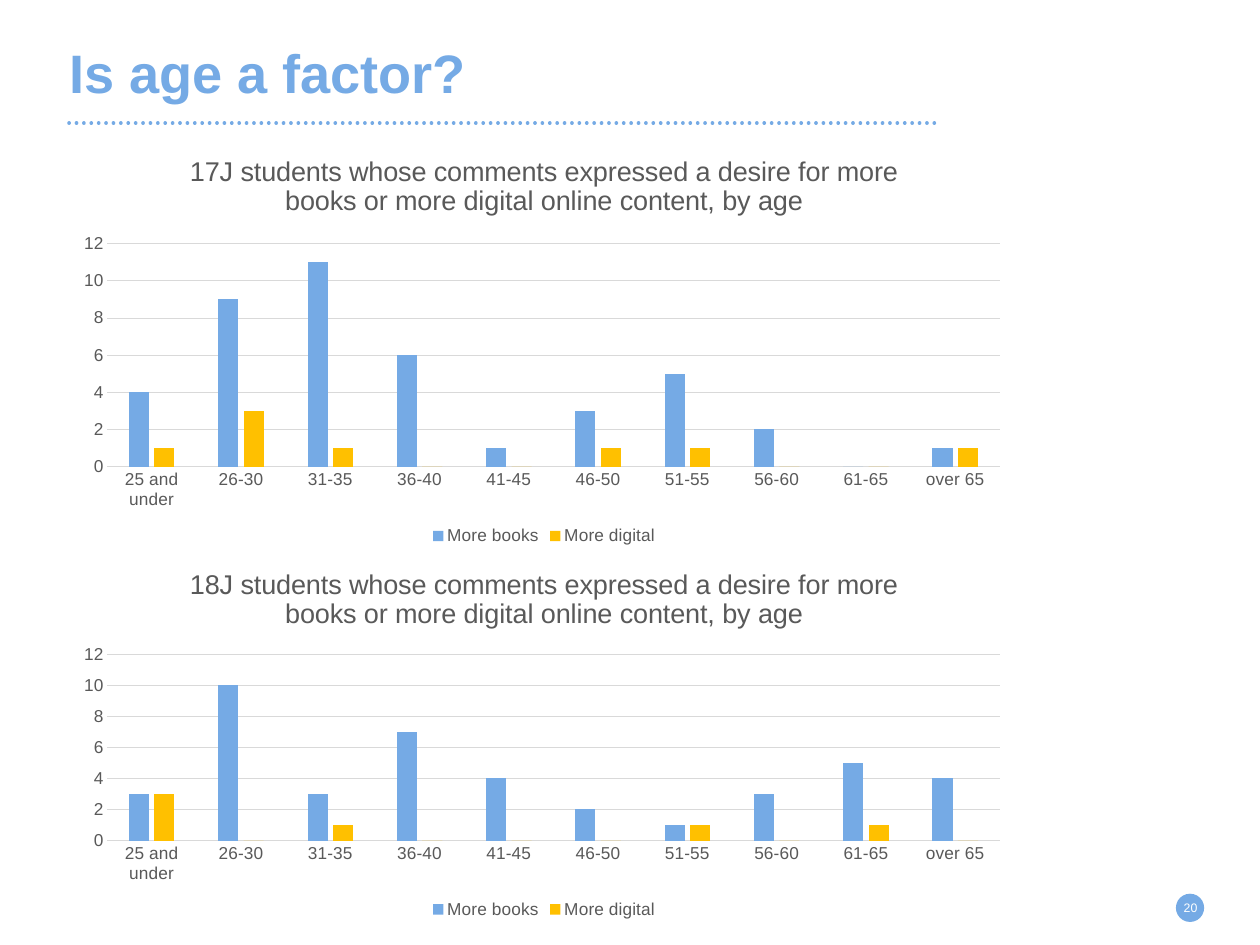
"""Build the slide on age and the wish for more books or digital content."""
from pptx import Presentation
from pptx.chart.data import CategoryChartData
from pptx.dml.color import RGBColor
from pptx.enum.chart import XL_CHART_TYPE, XL_LEGEND_POSITION, XL_TICK_MARK
from pptx.enum.dml import MSO_LINE
from pptx.enum.shapes import MSO_CONNECTOR, MSO_SHAPE
from pptx.enum.text import MSO_ANCHOR, PP_ALIGN
from pptx.oxml import parse_xml
from pptx.oxml.ns import nsdecls, qn
from pptx.util import Cm, Pt
from lxml import etree

COLUMN = XL_CHART_TYPE.COLUMN_CLUSTERED
BOTTOM = XL_LEGEND_POSITION.BOTTOM
NO_TICK = XL_TICK_MARK.NONE
DOTS = MSO_LINE.ROUND_DOT
STRAIGHT = MSO_CONNECTOR.STRAIGHT
OVAL = MSO_SHAPE.OVAL
TOP, MIDDLE = MSO_ANCHOR.TOP, MSO_ANCHOR.MIDDLE
LEFT, CENTER = PP_ALIGN.LEFT, PP_ALIGN.CENTER

HEAD = "Is age a factor?"
PAGE = "20"
ASK = "students whose comments expressed a desire for more books or more digital online content, by age"
AGES = ["25 and under", "26-30", "31-35", "36-40", "41-45",
        "46-50", "51-55", "56-60", "61-65", "over 65"]
NAMES = ("More books", "More digital")
CHARTS = [
    {"term": "18J", "top": 15.77, "high": 10.69, "plot": (0.28, 0.5),
     "counts": ([3, 10, 3, 7, 4, 2, 1, 3, 5, 4], [3, 0, 1, 0, 0, 0, 1, 0, 1, 0])},
    {"term": "17J", "top": 3.91, "high": 11.84, "plot": (0.26, 0.54),
     "counts": ([4, 9, 11, 6, 1, 3, 5, 2, 0, 1], [1, 3, 1, 0, 0, 1, 1, 0, 0, 1])},
]
THEME = {
    "font": "Arial", "blue": "75AAE5", "gold": "FFC000", "gray": "595959",
    "grid": "D9D9D9", "white": "FFFFFF",
    "head": 44, "title": 22, "label": 14, "page": 10,
}
EDGE, WIDE = 1.98, 27.23


def tint(name):
    return RGBColor.from_string(THEME[name])


def style(font, size, color, bold=False):
    font.name, font.size, font.bold = THEME["font"], Pt(THEME[size]), bold
    font.color.rgb = tint(color)


def add_text(slide, box, text, size, color, bold=False, align=LEFT,
             anchor=TOP, pad=(0, 0), lead=None):
    frame = slide.shapes.add_textbox(*map(Cm, box)).text_frame
    frame.word_wrap, frame.vertical_anchor = True, anchor
    frame.margin_left = frame.margin_right = Cm(pad[0])
    frame.margin_top = frame.margin_bottom = Cm(pad[1])
    para = frame.paragraphs[0]
    para.alignment = align
    if lead:
        para.line_spacing = Pt(lead)
    run = para.add_run()
    run.text = text
    style(run.font, size, color, bold)


def add_rule(slide):
    rule = slide.shapes.add_connector(STRAIGHT, Cm(EDGE), Cm(3.53), Cm(26.97), Cm(3.53))
    rule.line.color.rgb = tint("blue")
    rule.line.width = Pt(3)
    rule.line.dash_style = DOTS
    props = rule._element.spPr
    props.find(qn("a:ln")).set("cap", "rnd")
    etree.SubElement(props, qn("a:effectLst"))


def add_badge(slide):
    disc = slide.shapes.add_shape(OVAL, Cm(33.71), Cm(25.63), Cm(0.81), Cm(0.81))
    disc.shadow.inherit = False
    disc.fill.solid()
    disc.fill.fore_color.rgb = tint("blue")
    disc.line.fill.background()
    add_text(slide, (33.43, 25.3, 1.4, 1.45), PAGE, "page", "white",
             align=CENTER, anchor=MIDDLE, pad=(0.36, 0.18))


def place_plot(chart, top, high):
    area = chart._chartSpace.chart.plotArea
    for old in area.findall(qn("c:layout")):
        area.remove(old)
    spots = {"x": 0.04, "y": top, "w": 0.94, "h": high}
    modes = '<c:layoutTarget val="inner"/><c:xMode val="edge"/><c:yMode val="edge"/>'
    sizes = "".join(f'<c:{key} val="{val}"/>' for key, val in spots.items())
    area.insert(0, parse_xml(
        f'<c:layout {nsdecls("c")}><c:manualLayout>{modes}{sizes}</c:manualLayout></c:layout>'))


def add_bars(slide, item):
    data = CategoryChartData()
    data.categories = AGES
    for name, counts in zip(NAMES, item["counts"]):
        data.add_series(name, counts)
    chart = slide.shapes.add_chart(COLUMN, Cm(EDGE), Cm(item["top"]), Cm(WIDE),
                                   Cm(item["high"]), data).chart
    style(chart.font, "label", "gray")

    run = chart.chart_title.text_frame.paragraphs[0].add_run()
    run.text = f'{item["term"]} {ASK}'
    style(run.font, "title", "gray")
    chart.chart_title.include_in_layout = False

    chart.has_legend = True
    chart.legend.position = BOTTOM
    chart.legend.include_in_layout = False
    style(chart.legend.font, "label", "gray")

    ages, scale = chart.category_axis, chart.value_axis
    for axis in (ages, scale):
        axis.major_tick_mark = axis.minor_tick_mark = NO_TICK
        style(axis.tick_labels.font, "label", "gray")
    scale.minimum_scale, scale.maximum_scale, scale.major_unit = 0, 12, 2
    scale.format.line.fill.background()
    for line in (ages.format.line, scale.major_gridlines.format.line):
        line.color.rgb = tint("grid")
        line.width = Pt(0.75)

    plot = chart.plots[0]
    plot.gap_width, plot.overlap, plot.vary_by_categories = 219, -27, False
    for bars, color in zip(plot.series, ("blue", "gold")):
        bars.format.fill.solid()
        bars.format.fill.fore_color.rgb = tint(color)
    place_plot(chart, *item["plot"])


def main():
    deck = Presentation()
    deck.slide_width, deck.slide_height = Cm(36.12), Cm(27.1)
    slide = deck.slides.add_slide(deck.slide_layouts[6])
    slide.background.fill.solid()
    slide.background.fill.fore_color.rgb = tint("white")
    add_rule(slide)
    add_text(slide, (EDGE, 1.17, 26.42, 2.29), HEAD, "head", "blue", bold=True, lead=52)
    add_badge(slide)
    for item in CHARTS:
        add_bars(slide, item)
    deck.save("out.pptx")


if __name__ == "__main__":
    main()
